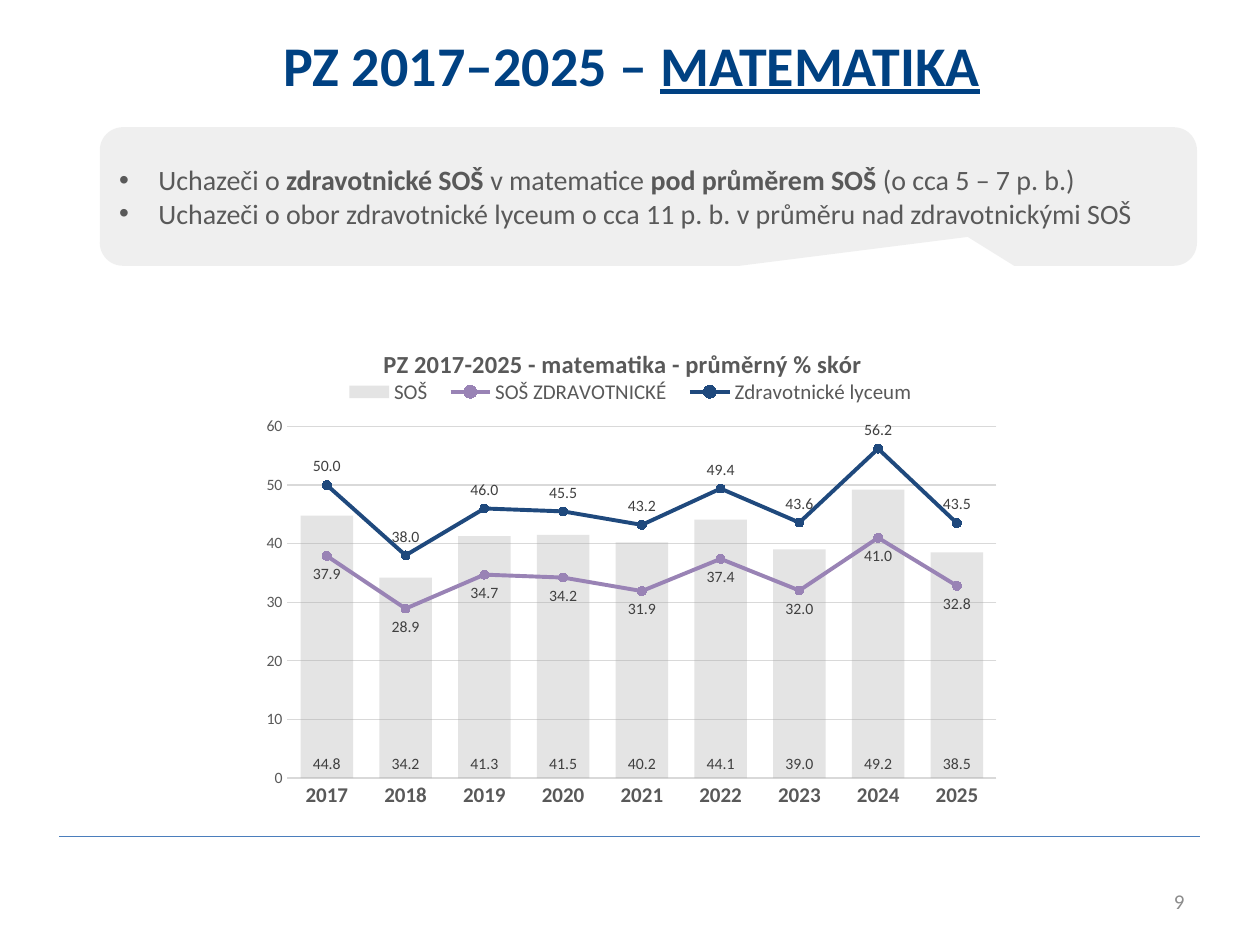
from pptx import Presentation
from pptx.chart.data import CategoryChartData
from pptx.dml.color import RGBColor
from pptx.enum.chart import (XL_CHART_TYPE, XL_LABEL_POSITION, XL_LEGEND_POSITION,
                             XL_MARKER_STYLE, XL_TICK_MARK)
from pptx.enum.shapes import MSO_CONNECTOR
from pptx.enum.text import MSO_ANCHOR, MSO_AUTO_SIZE, PP_ALIGN
from pptx.oxml import parse_xml
from pptx.oxml.ns import nsdecls, qn
from pptx.util import Pt

FONT = "Calibri"
COLORS = {
    "title": "004182", "text": "595959", "label": "404040", "number": "8C8C8C",
    "callout": "D9D9D9", "grid": "D9D9D9", "rule": "4B7EBC",
    "all": "A6A6A6", "nursing": "9983B5", "lyceum": "1F497D",
}
YEARS = [str(year) for year in range(2017, 2026)]
SCORES = {
    "SOŠ": [44.8, 34.2, 41.3, 41.5, 40.2, 44.1, 39.0, 49.2, 38.5],
    "SOŠ ZDRAVOTNICKÉ": [37.9, 28.9, 34.7, 34.2, 31.9, 37.4, 32.0, 41.0, 32.8],
    "Zdravotnické lyceum": [50.0, 38.0, 46.0, 45.5, 43.2, 49.4, 43.6, 56.2, 43.5],
}
FINDINGS = [
    [("Uchazeči o ", False), ("zdravotnické SOŠ", True), (" v matematice ", False),
     ("pod průměrem SOŠ ", True), ("(o cca 5 – 7 p. b.)", False)],
    [("Uchazeči o obor zdravotnické lyceum o cca 11 p. b. v průměru nad zdravotnickými SOŠ",
      False)],
]


def color(name):
    return RGBColor.from_string(COLORS[name])


def style_font(font, size, name, bold=False):
    font.name = FONT
    font.size = Pt(size)
    font.bold = bold
    font.color.rgb = color(name)


def place(shape, left, top, width, height):
    shape.left, shape.top = Pt(left), Pt(top)
    shape.width, shape.height = Pt(width), Pt(height)


def set_opacity(properties, percent):
    fill_color = properties.find(qn("a:solidFill")).find(qn("a:srgbClr"))
    fill_color.append(parse_xml(f'<a:alpha {nsdecls("a")} val="{percent * 1000}"/>'))


def prepare_frame(shape):
    frame = shape.text_frame
    frame.word_wrap = True
    frame.auto_size = MSO_AUTO_SIZE.NONE
    frame.vertical_anchor = MSO_ANCHOR.MIDDLE
    return frame


def add_title(page):
    title = page.shapes.title
    place(title, 11.5, 8.6, 699, 60.5)
    para = prepare_frame(title).paragraphs[0]
    para.alignment = PP_ALIGN.CENTER
    para.line_spacing = 0.9
    for text, underlined in [("PZ 2017–2025 – ", False), ("MATEMATIKA", True)]:
        span = para.add_run()
        span.text = text
        style_font(span.font, 32, "title", True)
        span.font.underline = underlined


def add_callout(page):
    callout = page.placeholders[1]
    place(callout, 57, 72.7, 627, 79.2)
    guides = "".join(f'<a:gd name="adj{index}" fmla="val {value}"/>'
                     for index, value in enumerate([29100, 29200, 16667], 1))
    properties = callout._element.spPr
    properties.insert(1, parse_xml(
        f'<a:prstGeom {nsdecls("a")} prst="wedgeRoundRectCallout">'
        f'<a:avLst>{guides}</a:avLst></a:prstGeom>'))
    callout.fill.solid()
    callout.fill.fore_color.rgb = color("callout")
    set_opacity(properties, 40)
    frame = prepare_frame(callout)
    for index, finding in enumerate(FINDINGS):
        para = frame.add_paragraph() if index else frame.paragraphs[0]
        para.space_before = Pt(0)
        layout = para._p.get_or_add_pPr()
        layout.set("marL", str(Pt(22.5)))
        layout.set("indent", str(-Pt(22.5)))
        for text, bold in finding:
            span = para.add_run()
            span.text = text
            style_font(span.font, 16, "text", bold)


def add_page_number(page):
    box = page.shapes.add_textbox(Pt(516), Pt(500.5), Pt(168), Pt(28.8))
    para = prepare_frame(box).paragraphs[0]
    para.text = "9"
    para.alignment = PP_ALIGN.RIGHT
    style_font(para.runs[0].font, 12, "number")


def add_rule(page):
    rule = page.shapes.add_connector(MSO_CONNECTOR.STRAIGHT, Pt(34), Pt(478), Pt(686), Pt(478))
    rule.line.color.rgb = color("rule")
    rule.line.width = Pt(0.75)
    rule._element.spPr.append(parse_xml(f'<a:effectLst {nsdecls("a")}/>'))


def set_layout(parent, position, sizes, inner=False):
    for old in parent.findall(qn("c:layout")):
        parent.remove(old)
    target = '<c:layoutTarget val="inner"/>' if inner else ""
    modes = '<c:xMode val="edge"/><c:yMode val="edge"/>'
    values = "".join(f'<c:{key} val="{size}"/>' for key, size in zip("xywh", sizes))
    parent.insert(position, parse_xml(
        f'<c:layout {nsdecls("c")}><c:manualLayout>{target}{modes}{values}'
        '</c:manualLayout></c:layout>'))


def move_to_lines(chart):
    bars = chart.plots[0]._element
    axes = "".join(f'<c:axId val="{axis.get("val")}"/>' for axis in bars.findall(qn("c:axId")))
    lines = parse_xml(
        f'<c:lineChart {nsdecls("c")}><c:grouping val="standard"/><c:varyColors val="0"/>'
        f'<c:marker val="1"/>{axes}</c:lineChart>')
    for position, series in enumerate(bars.findall(qn("c:ser"))[1:], 2):
        for flag in series.findall(qn("c:invertIfNegative")):
            series.remove(flag)
        lines.insert(position, series)
    bars.addnext(lines)


def style_labels(series, position):
    labels = series.data_labels
    labels.show_value = True
    labels.position = position
    labels.number_format = "#,##0.0"
    labels.number_format_is_linked = False
    style_font(labels.font, 9, "label")


def style_line(series, name, position):
    series.smooth = False
    series.format.line.color.rgb = color(name)
    series.format.line.width = Pt(2.25)
    marker = series.marker
    marker.style = XL_MARKER_STYLE.CIRCLE
    marker.size = 5
    marker.format.fill.solid()
    marker.format.fill.fore_color.rgb = color(name)
    marker.format.line.color.rgb = color(name)
    style_labels(series, position)


def style_axes(chart):
    years, scores = chart.category_axis, chart.value_axis
    for axis in (years, scores):
        axis.major_tick_mark = axis.minor_tick_mark = XL_TICK_MARK.NONE
    style_font(years.tick_labels.font, 12, "text", True)
    style_font(scores.tick_labels.font, 9, "text")
    scores.minimum_scale, scores.maximum_scale, scores.major_unit = 0, 60, 10
    scores.tick_labels.number_format = "#,##0"
    scores.tick_labels.number_format_is_linked = False
    scores.format.line.fill.background()
    for line in (years.format.line, scores.major_gridlines.format.line):
        line.color.rgb = color("grid")
        line.width = Pt(0.75)


def add_score_chart(page):
    data = CategoryChartData(number_format="0.0")
    data.categories = YEARS
    for name, values in SCORES.items():
        data.add_series(name, values)
    chart = page.shapes.add_chart(XL_CHART_TYPE.COLUMN_CLUSTERED, Pt(142.5), Pt(184.3),
                                  Pt(435.6), Pt(283), data).chart
    chart.font.name = FONT
    chart.font.size = Pt(10)
    chart.has_title = True
    heading = chart.chart_title.text_frame
    heading.text = "PZ 2017-2025 - matematika - průměrný % skór"
    style_font(heading.paragraphs[0].runs[0].font, 14, "text", True)
    set_layout(chart.chart_title._element, 1, [0.17, 0.04])
    chart.has_legend = True
    chart.legend.position = XL_LEGEND_POSITION.BOTTOM
    chart.legend.include_in_layout = False
    style_font(chart.legend.font, 12, "text")
    set_layout(chart.legend._element, 1, [0.11, 0.1, 0.78, 0.08])
    style_axes(chart)
    move_to_lines(chart)
    set_layout(chart._chartSpace.chart.plotArea, 0, [0.05, 0.21, 0.93, 0.71], True)
    bars, lines = chart.plots
    bars.gap_width = 50
    bars.vary_by_categories = False
    columns = bars.series[0]
    columns.format.fill.solid()
    columns.format.fill.fore_color.rgb = color("all")
    set_opacity(columns._element.find(qn("c:spPr")), 30)
    style_labels(columns, XL_LABEL_POSITION.INSIDE_BASE)
    style_line(lines.series[0], "nursing", XL_LABEL_POSITION.BELOW)
    style_line(lines.series[1], "lyceum", XL_LABEL_POSITION.ABOVE)


def main():
    deck = Presentation()
    deck.slide_width, deck.slide_height = Pt(720), Pt(540)
    page = deck.slides.add_slide(deck.slide_layouts[1])
    add_rule(page)
    add_page_number(page)
    add_callout(page)
    add_title(page)
    add_score_chart(page)
    deck.save("out.pptx")


if __name__ == "__main__":
    main()
